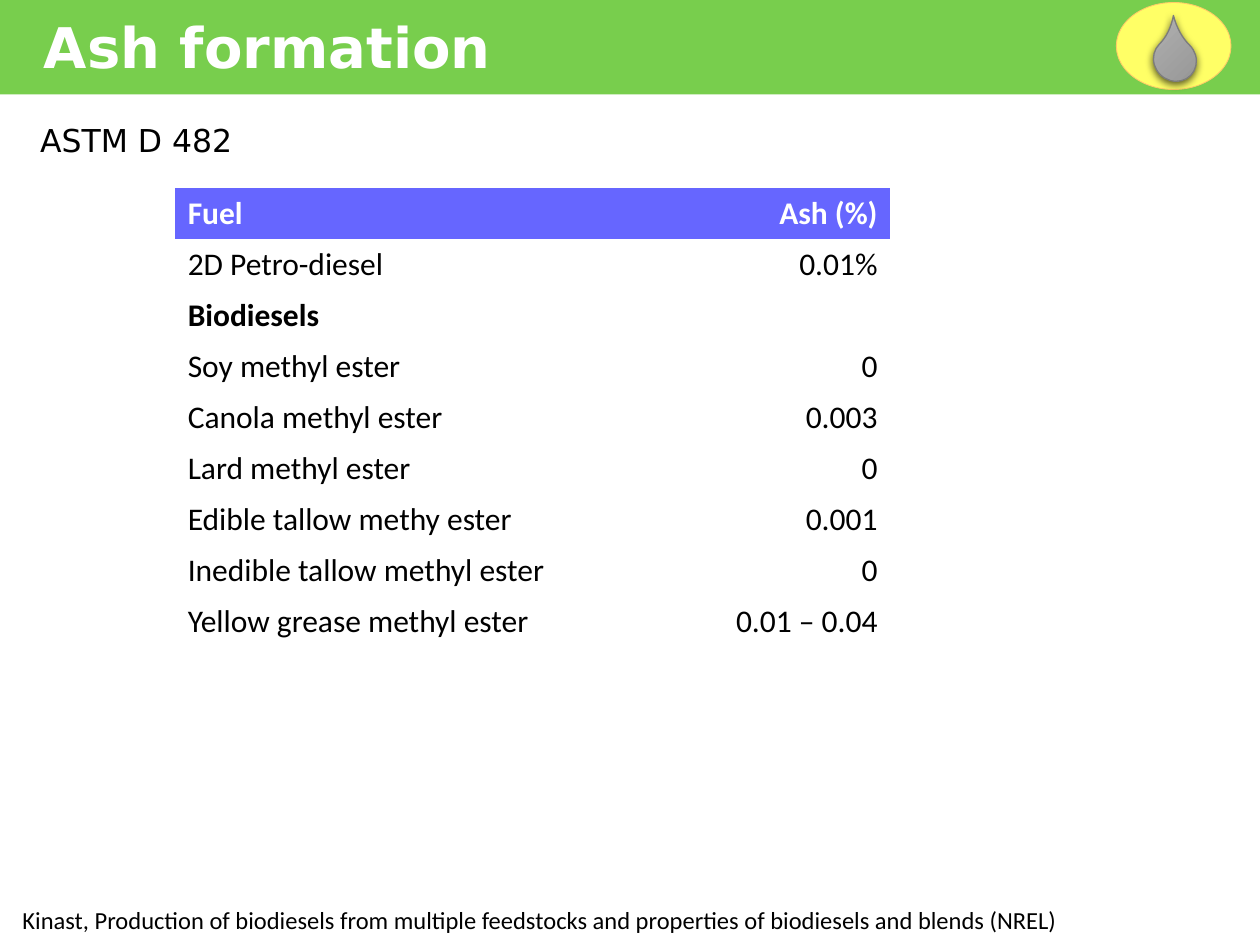
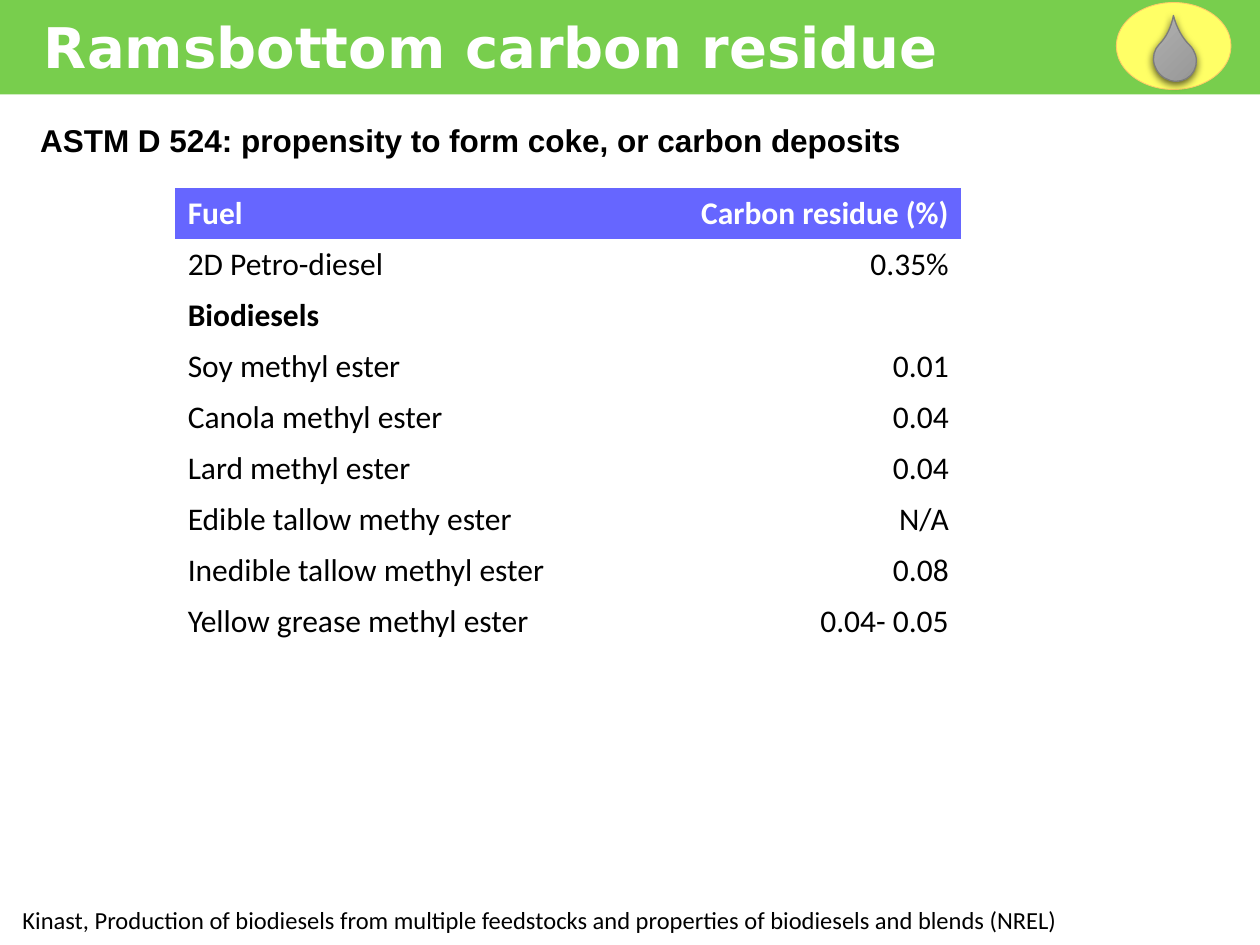
import dataclasses

import lxml.etree
import pptx
import pptx.dml.color
import pptx.enum.shapes
import pptx.enum.text
import pptx.oxml
import pptx.oxml.ns
import pptx.presentation
import pptx.shapes.autoshape
import pptx.slide
import pptx.util

RGBColor = pptx.dml.color.RGBColor
PresetShape = pptx.enum.shapes.MSO_SHAPE
Pt = pptx.util.Pt

BAND_GREEN = RGBColor(0x78, 0xCE, 0x4D)
HEADER_BLUE = RGBColor(0x66, 0x66, 0xFF)
BADGE_YELLOW = RGBColor(0xFF, 0xFF, 0x66)
BADGE_EDGE = RGBColor(0xFF, 0xCC, 0x66)
DROP_LIGHT = RGBColor(0xAF, 0xAF, 0xAF)
DROP_DARK = RGBColor(0x93, 0x93, 0x93)
DROP_EDGE = RGBColor(0x7C, 0x7C, 0x7C)
WHITE = RGBColor(0xFF, 0xFF, 0xFF)
BLACK = RGBColor(0, 0, 0)

SLIDE_WIDTH = pptx.util.Inches(10)
SLIDE_HEIGHT = pptx.util.Inches(7.5)
NO_GRID_STYLE = "{2D5ABB26-0587-4C30-8999-92F81FD0307C}"
DROP_SHADOW = (
    f'<a:effectLst {pptx.oxml.ns.nsdecls("a")}>'
    '<a:outerShdw blurRad="57150" dist="19050" dir="5400000" algn="ctr" rotWithShape="0">'
    '<a:srgbClr val="000000"><a:alpha val="63000"/></a:srgbClr>'
    "</a:outerShdw></a:effectLst>"
)

CITATION = (
    "Kinast, Production of biodiesels from multiple feedstocks "
    "and properties of biodiesels and blends (NREL)"
)
SECTION = "Biodiesels"
FUELS = (
    "2D Petro-diesel",
    SECTION,
    "Soy methyl ester",
    "Canola methyl ester",
    "Lard methyl ester",
    "Edible tallow methy ester",
    "Inedible tallow methyl ester",
    "Yellow grease methyl ester",
)


@dataclasses.dataclass(frozen=True)
class Box:
    """A place given in percent of the slide's width and height."""

    left: float
    top: float
    width: float
    height: float

    def lengths(self) -> tuple[int, int, int, int]:
        return (
            across(self.left),
            down(self.top),
            across(self.width),
            down(self.height),
        )


@dataclasses.dataclass(frozen=True)
class TextStyle:
    font_name: str
    size: int
    color: RGBColor = BLACK
    bold: bool = False
    line_spacing: float = 1.0

    def apply(self, paragraph) -> None:
        paragraph.line_spacing = self.line_spacing
        font = paragraph.font
        font.name, font.size, font.bold = self.font_name, Pt(self.size), self.bold
        font.color.rgb = self.color


@dataclasses.dataclass(frozen=True)
class FuelSlide:
    title: str
    title_width: float
    standard: str
    standard_style: TextStyle
    measure: str
    values: tuple[str, ...]
    column_widths: tuple[float, float]


BAND = Box(0, 0, 100, 10)
BADGE = Box(88.6, 0.27, 9.1, 9.2)
DROP = Box(91.6, 4, 3.3, 4.67)
STANDARD = Box(2.2, 11.33, 93.4, 5.87)
CITATION_BOX = Box(0.8, 95.07, 84.4, 4.53)
TABLE_LEFT, TABLE_TOP, TABLE_HEIGHT = 13.9, 19.87, 48.67

TITLE_STYLE = TextStyle("DejaVu Sans", 32, WHITE, bold=True)
CITATION_STYLE = TextStyle("Calibri", 14)
BODY_STYLE = TextStyle("Calibri", 18)
SECTION_STYLE = dataclasses.replace(BODY_STYLE, bold=True)
HEADER_STYLE = dataclasses.replace(SECTION_STYLE, color=WHITE)

SLIDES = (
    FuelSlide(
        "Ash formation",
        37.7,
        "ASTM D 482",
        TextStyle("DejaVu Sans", 18, line_spacing=1.2),
        "Ash (%)",
        ("0.01%", "", "0", "0.003", "0", "0.001", "0", "0.01 – 0.04"),
        (38.6, 18.15),
    ),
    FuelSlide(
        "Ramsbottom carbon residue",
        73.2,
        "ASTM D 524: propensity to form coke, or carbon deposits",
        TextStyle("Arial", 18, bold=True, line_spacing=1.2),
        "Carbon residue (%)",
        ("0.35%", "", "0.01", "0.04", "0.04", "N/A", "0.08", "0.04- 0.05"),
        (33.6, 28.8),
    ),
)


def across(percent: float) -> int:
    return round(SLIDE_WIDTH * percent / 100)


def down(percent: float) -> int:
    return round(SLIDE_HEIGHT * percent / 100)


def add_filled(
    shapes, preset: PresetShape, box: Box, color: RGBColor
) -> pptx.shapes.autoshape.Shape:
    shape = shapes.add_shape(preset, *box.lengths())
    shape.shadow.inherit = False
    shape.fill.solid()
    shape.fill.fore_color.rgb = color
    shape.line.fill.background()
    return shape


def set_outline(
    shape: pptx.shapes.autoshape.Shape, color: RGBColor, width: float
) -> None:
    shape.line.color.rgb = color
    shape.line.width = Pt(width)


def add_text(
    slide: pptx.slide.Slide, box: Box, text: str, style: TextStyle, wrap: bool = False
) -> None:
    frame = slide.shapes.add_textbox(*box.lengths()).text_frame
    frame.word_wrap = wrap
    frame.auto_size = pptx.enum.text.MSO_AUTO_SIZE.SHAPE_TO_FIT_TEXT
    frame.text = text
    style.apply(frame.paragraphs[0])


def add_drop_badge(slide: pptx.slide.Slide) -> None:
    group = slide.shapes.add_group_shape()
    badge = add_filled(group.shapes, PresetShape.OVAL, BADGE, BADGE_YELLOW)
    set_outline(badge, BADGE_EDGE, 0.5)

    drop = add_filled(group.shapes, PresetShape.TEAR, DROP, DROP_LIGHT)
    drop.adjustments[0] = 1.465
    drop.rotation = 314.8
    drop.fill.gradient()
    drop.fill.gradient_angle = 270
    for stop, color in zip(drop.fill.gradient_stops, (DROP_LIGHT, DROP_DARK)):
        stop.color.rgb = color
    set_outline(drop, DROP_EDGE, 0.75)
    properties = drop._element.spPr
    properties.replace(
        properties.find(pptx.oxml.ns.qn("a:effectLst")),
        pptx.oxml.parse_xml(DROP_SHADOW),
    )


def add_fuel_table(slide: pptx.slide.Slide, content: FuelSlide) -> None:
    rows = [("Fuel", content.measure), *zip(FUELS, content.values)]
    box = Box(TABLE_LEFT, TABLE_TOP, sum(content.column_widths), TABLE_HEIGHT)
    table = slide.shapes.add_table(len(rows), 2, *box.lengths()).table
    table.horz_banding = False
    style_id = table._tbl.tblPr.find(pptx.oxml.ns.qn("a:tableStyleId"))
    style_id.text = NO_GRID_STYLE
    for column, width in zip(table.columns, content.column_widths):
        column.width = across(width)

    for row_index, row in enumerate(rows):
        is_header = row_index == 0
        if is_header:
            style = HEADER_STYLE
        else:
            style = SECTION_STYLE if row[0] == SECTION else BODY_STYLE
        for column_index, text in enumerate(row):
            cell = table.cell(row_index, column_index)
            if is_header:
                cell.fill.solid()
                cell.fill.fore_color.rgb = HEADER_BLUE
            else:
                cell.fill.background()
            cell.text = text
            paragraph = cell.text_frame.paragraphs[0]
            style.apply(paragraph)
            if column_index == 1:
                paragraph.alignment = pptx.enum.text.PP_ALIGN.RIGHT


def add_fuel_slide(
    presentation: pptx.presentation.Presentation, content: FuelSlide
) -> None:
    slide = presentation.slides.add_slide(presentation.slide_layouts[6])
    add_filled(slide.shapes, PresetShape.RECTANGLE, BAND, BAND_GREEN)
    title_box = Box(2.5, 0.67, content.title_width, 8.53)
    add_text(slide, title_box, content.title, TITLE_STYLE)
    add_drop_badge(slide)
    add_text(slide, CITATION_BOX, CITATION, CITATION_STYLE)
    add_fuel_table(slide, content)
    add_text(slide, STANDARD, content.standard, content.standard_style, wrap=True)


def main() -> None:
    presentation = pptx.Presentation()
    presentation.slide_width = SLIDE_WIDTH
    presentation.slide_height = SLIDE_HEIGHT
    for content in SLIDES:
        add_fuel_slide(presentation, content)
    presentation.save("out.pptx")


if __name__ == "__main__":
    main()
